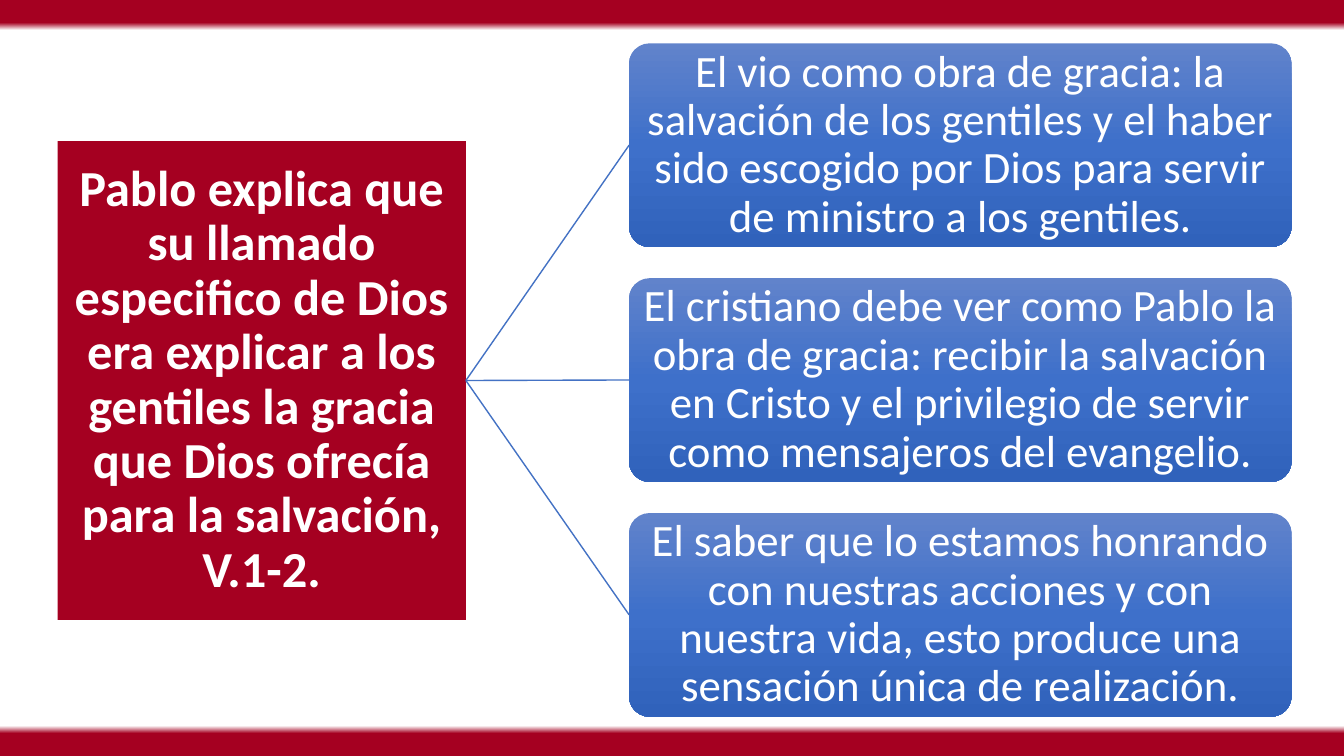
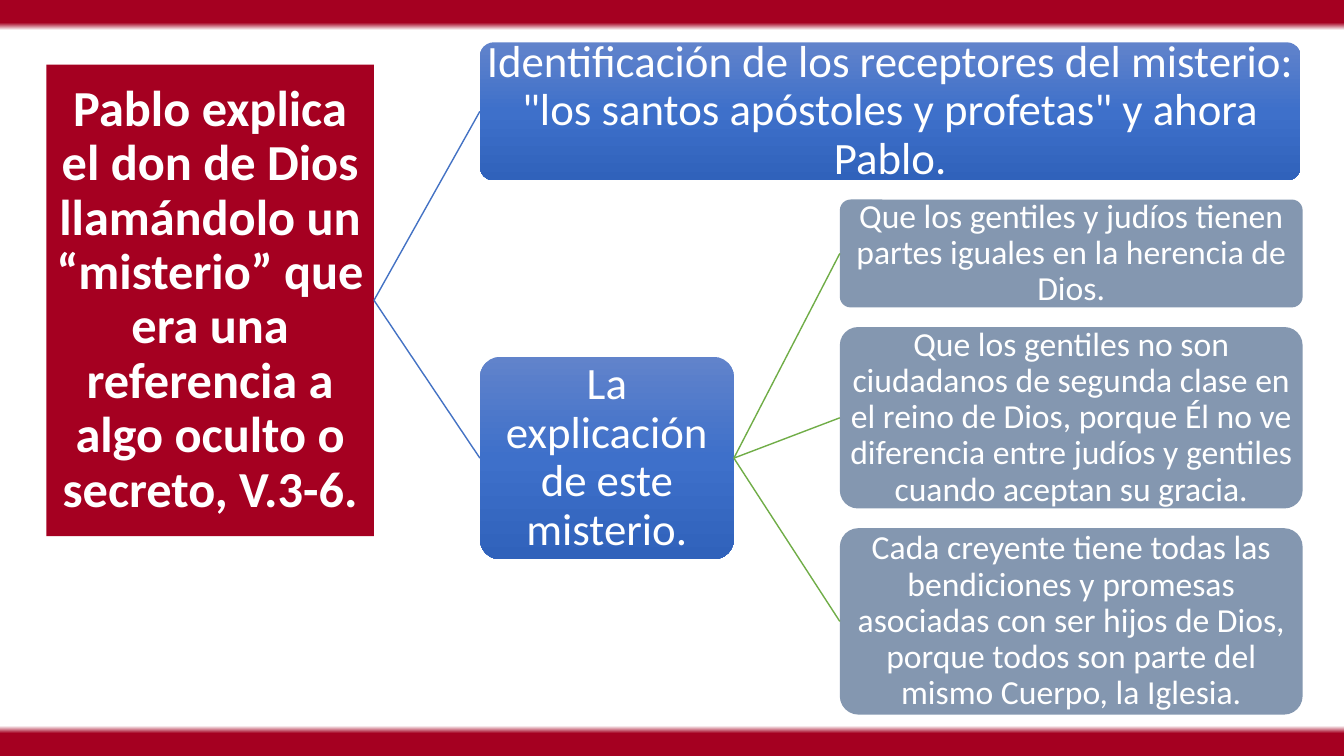
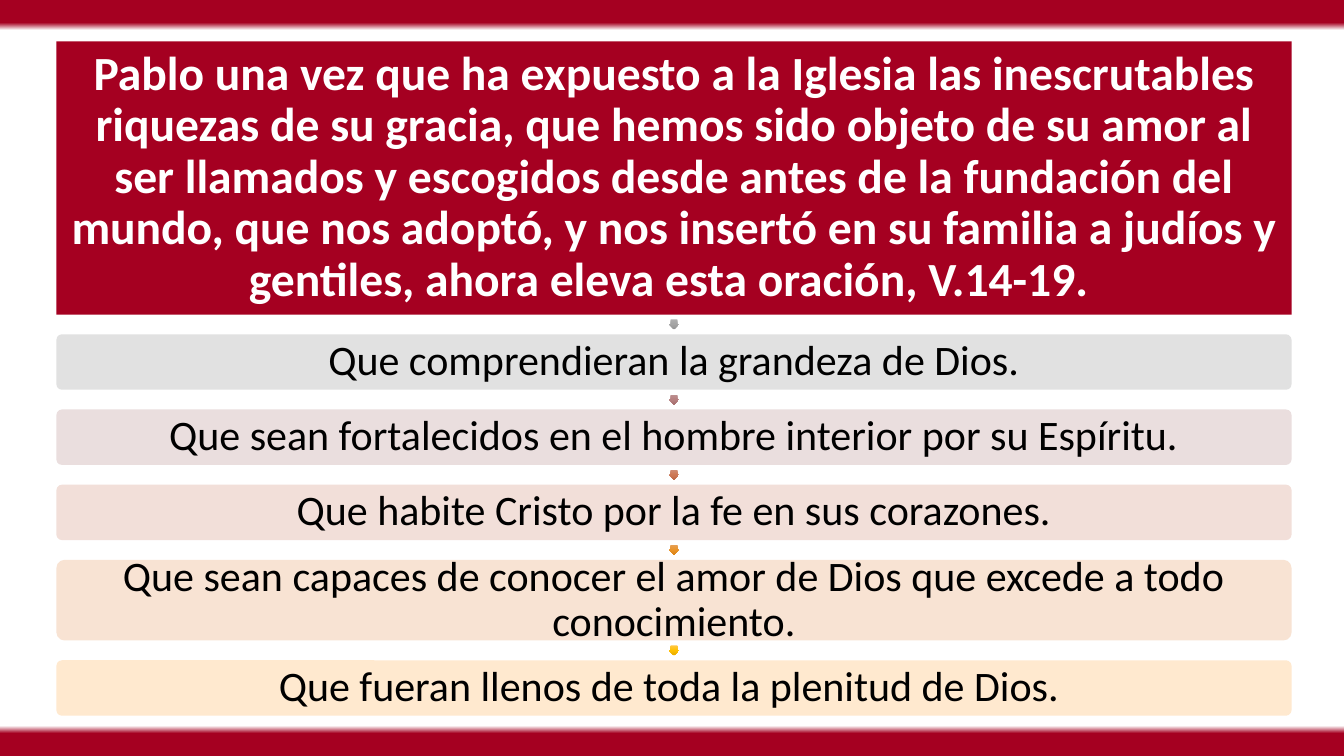
from dataclasses import dataclass

from lxml.etree import SubElement
from pptx import Presentation
from pptx.dml.color import RGBColor as RGB
from pptx.enum.shapes import MSO_CONNECTOR as CONN, MSO_SHAPE as SHAPE
from pptx.enum.text import MSO_ANCHOR as ANCHOR, MSO_AUTO_SIZE as AUTO, PP_ALIGN as ALIGN
from pptx.oxml.ns import qn
from pptx.util import Inches, Pt


@dataclass(frozen=True)
class Theme:
    """Colours and type sizes of the deck."""
    font: str = "Calibri"
    red: str = "A50021"
    white: str = "FFFFFF"
    black: str = "000000"
    blue: tuple = ("6183CB", "3E70CA", "3062BB")
    slate: str = "8497B0"
    blue_line: str = "4472C4"
    green_line: str = "70AD47"
    bars: tuple = ("E1E1E1", "EADEDE", "F2DFD9", "F8E3D3", "FFE9CF")
    arrows: tuple = (("AFAFAF", "A5A5A5", "939393"), ("BD9191", "B78080", "A56F6F"),
                     ("CF8A72", "CE7956", "BD6847"), ("E6A056", "EA9327", "DA8419"),
                     ("FFC746", "FFC000", "E5AC00"))
    title: int = 36
    long_title: int = 34
    branch: int = 32
    bar: int = 30
    leaf: int = 24


@dataclass(frozen=True)
class Box:
    """A rectangle in inches."""
    x: float
    y: float
    w: float
    h: float

    def inner(self, x, y, w, h):
        """Return an inner box given in percent of this one."""
        return Box(self.x + self.w * x / 100, self.y + self.h * y / 100,
                   self.w * w / 100, self.h * h / 100)

    def stack(self, heights):
        """Return full-width rows of percent heights with equal gaps between."""
        gap = (100 - sum(heights)) / (len(heights) - 1)
        return [self.inner(0, sum(heights[:i]) + i * gap, 100, h)
                for i, h in enumerate(heights)]

    def emu(self):
        """Return left, top, width and height as lengths."""
        return [Inches(v) for v in (self.x, self.y, self.w, self.h)]


T = Theme()
SLIDE = Box(0, 0, 13.33, 7.5)


def set_gradient(fill, element, stops):
    """Fill downwards with (percent, colour) stops."""
    fill.gradient()
    fill.gradient_angle = 270
    gs_list = next(element.iter(qn("a:gsLst")))
    for gs in list(gs_list):
        gs_list.remove(gs)
    for pos, color in stops:
        gs = SubElement(gs_list, qn("a:gs"), pos=str(pos * 1000))
        SubElement(gs, qn("a:srgbClr"), val=color)


def paint(sp, color):
    """Fill a shape with one colour or a three-step gradient, without outline."""
    if isinstance(color, tuple):
        set_gradient(sp.fill, sp.element, zip((0, 50, 100), color))
    else:
        sp.fill.solid()
        sp.fill.fore_color.rgb = RGB.from_string(color)
    sp.line.fill.background()


def write(sp, text, size, color, inset, bold=False):
    """Set one centred paragraph in a shape."""
    tf = sp.text_frame
    tf.word_wrap = True
    tf.auto_size = AUTO.NONE
    tf.vertical_anchor = ANCHOR.MIDDLE
    tf.margin_left = tf.margin_right = tf.margin_top = tf.margin_bottom = Inches(inset)
    p = tf.paragraphs[0]
    p.text = text
    p.alignment = ALIGN.CENTER
    p.line_spacing = 0.9
    p.font.name, p.font.size, p.font.bold = T.font, Pt(size), bold
    p.font.color.rgb = RGB.from_string(color)


def add_shape(s, kind, box, color):
    """Add a painted preset shape."""
    sp = s.shapes.add_shape(kind, *box.emu())
    sp.shadow.inherit = False
    paint(sp, color)
    return sp


def add_card(s, box, text, color, size, ink=T.white, inset=0.02):
    """Add a rounded card with text."""
    sp = add_shape(s, SHAPE.ROUNDED_RECTANGLE, box, color)
    sp.adjustments[0] = 0.1
    write(sp, text, size, ink, inset)
    return sp


def add_title(s, box, text, size=T.title, inset=0.03):
    """Turn the title placeholder into the red rounded card."""
    sp = s.shapes.title
    sp.left, sp.top, sp.width, sp.height = box.emu()
    geom = SubElement(sp.element.spPr, qn("a:prstGeom"), prst="roundRect")
    guides = SubElement(geom, qn("a:avLst"))
    SubElement(guides, qn("a:gd"), name="adj", fmla="val 10000")
    paint(sp, T.red)
    write(sp, text, size, T.white, inset, bold=True)
    return sp


def link(s, parent, children, color):
    """Join the right side of a card to the left side of each child."""
    for child in children:
        cx = s.shapes.add_connector(CONN.STRAIGHT, 0, 0, 0, 0)
        cx.begin_connect(parent, 3)
        cx.end_connect(child, 1)
        cx.line.color.rgb = RGB.from_string(color)
        cx.line.width = Pt(1)
        SubElement(cx.element.spPr, qn("a:effectLst"))


def calling_slide(s, box):
    """Title card with three equal branches."""
    title = add_title(s, box.inner(0, 14.52, 33.09, 71.11),
                      "Pablo explica que su llamado especifico de Dios era explicar a los "
                      "gentiles la gracia que Dios ofrecía para la salvación, V.1-2.")
    texts = (
        "El vio como obra de gracia: la salvación de los gentiles y el haber sido "
        "escogido por Dios para servir de ministro a los gentiles.",
        "El cristiano debe ver como Pablo la obra de gracia: recibir la salvación en "
        "Cristo y el privilegio de servir como mensajeros del evangelio.",
        "El saber que lo estamos honrando con nuestras acciones y con nuestra vida, "
        "esto produce una sensación única de realización.")
    rows = box.inner(46.32, 0, 53.68, 100).stack([30.24] * 3)
    link(s, title, [add_card(s, row, text, T.blue, T.branch)
                    for row, text in zip(rows, texts)], T.blue_line)


def mystery_slide(s, box):
    """Title card with two branches, the second with three leaves."""
    title = add_title(s, box.inner(0, 3.3, 26.08, 70.16),
                      "Pablo explica el don de Dios llamándolo un “misterio” que era una "
                      "referencia a algo oculto o secreto, V.3-6.")
    receivers = add_card(s, box.inner(34.51, 0, 65.33, 20.54),
                         "Identificación de los receptores del misterio: \"los santos "
                         "apóstoles y profetas\" y ahora Pablo.", T.blue, T.branch)
    meaning = add_card(s, box.inner(34.51, 46.78, 20.22, 30.13),
                       "La explicación de este misterio.", T.blue, T.branch)
    link(s, title, [receivers, meaning], T.blue_line)
    texts = (
        "Que los gentiles y judíos tienen partes iguales en la herencia de Dios.",
        "Que los gentiles no son ciudadanos de segunda clase en el reino de Dios, porque "
        "Él no ve diferencia entre judíos y gentiles cuando aceptan su gracia.",
        "Cada creyente tiene todas las bendiciones y promesas asociadas con ser hijos de "
        "Dios, porque todos son parte del mismo Cuerpo, la Iglesia.")
    rows = box.inner(63.16, 23.39, 36.84, 76.61).stack([20.94, 35.23, 36.2])
    link(s, meaning, [add_card(s, row, text, T.slate, T.leaf)
                      for row, text in zip(rows, texts)], T.green_line)


def prayer_slide(s, box):
    """Title card above five bars, with a small arrow in each gap."""
    texts = (
        "Que comprendieran la grandeza de Dios.",
        "Que sean fortalecidos en el hombre interior por su Espíritu.",
        "Que habite Cristo por la fe en sus corazones.",
        "Que sean capaces de conocer el amor de Dios que excede a todo conocimiento.",
        "Que fueran llenos de toda la plenitud de Dios. ")
    head, *rows = box.stack([40.51, 8.22, 8.22, 8.22, 11.96, 8.22])
    add_title(s, head,
              "Pablo una vez que ha expuesto a la Iglesia las inescrutables riquezas de su "
              "gracia, que hemos sido objeto de su amor al ser llamados y escogidos desde "
              "antes de la fundación del mundo, que nos adoptó, y nos insertó en su familia "
              "a judíos y gentiles, ahora eleva esta oración, V.14-19. ",
              T.long_title, 0.05)
    gap = rows[0].y - head.y - head.h
    side = gap / 2
    for row, text, bar, arrow in zip(rows, texts, T.bars, T.arrows):
        middle = Box(row.x + (row.w - side) / 2, row.y - (gap + side) / 2, side, side)
        sp = add_shape(s, SHAPE.DOWN_ARROW, middle, arrow)
        sp.adjustments[0], sp.adjustments[1] = 0.67, 0.5
        add_card(s, row, text, bar, T.bar, T.black, 0.04)


def main():
    """Build the deck."""
    prs = Presentation()
    prs.slide_width, prs.slide_height = Inches(SLIDE.w), Inches(SLIDE.h)
    master = prs.slide_master
    set_gradient(master.background.fill, master.element,
                 ((3, T.red), (4, T.white), (96, T.white), (97, T.red)))
    for build, area in ((calling_slide, (4.28, 5.73, 91.82, 89.07)),
                        (mystery_slide, (3.45, 5.6, 93.47, 88.93)),
                        (prayer_slide, (4.2, 5.47, 91.9, 89.2))):
        build(prs.slides.add_slide(prs.slide_layouts[5]), SLIDE.inner(*area))
    prs.save("out.pptx")


if __name__ == "__main__":
    main()
